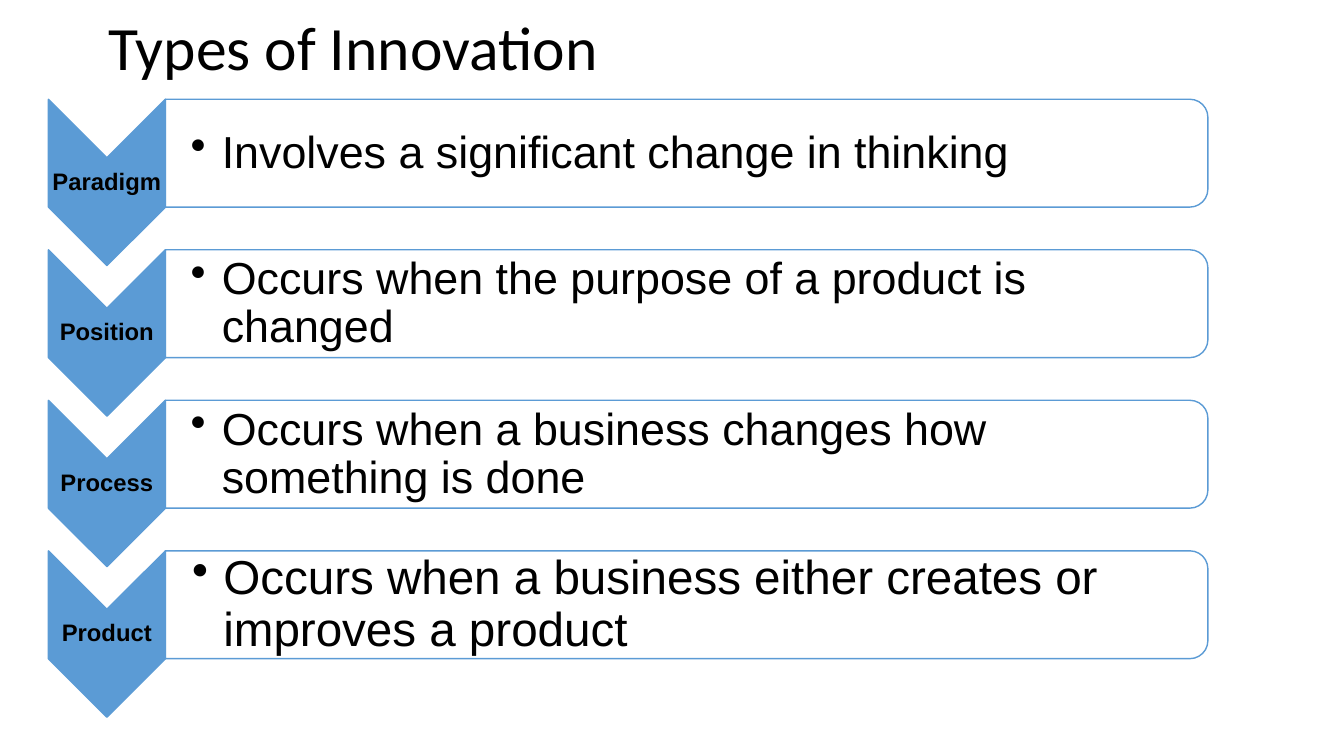
from lxml.etree import SubElement
from pptx import Presentation
from pptx.dml.color import RGBColor
from pptx.enum.shapes import MSO_SHAPE
from pptx.enum.text import MSO_ANCHOR, PP_ALIGN
from pptx.oxml.ns import qn
from pptx.util import Inches, Pt

COLORS = {"blue": "5B9BD5", "white": "FFFFFF", "black": "000000"}
ROWS = [
    ("Paradigm", "Involves a significant change in thinking", 32),
    ("Position", "Occurs when the purpose of a product is changed", 32),
    ("Process", "Occurs when a business changes how something is done", 32),
    ("Product", "Occurs when a business either creates or improves a product", 34),
]
TOP = 1.04
PITCH = 4.48 / 3


def color(name):
    return RGBColor.from_string(COLORS[name])


def add_turned(slide, kind, mid_x, mid_y, width, height, fill):
    """Add a shape turned by 90 degrees about its middle."""
    shape = slide.shapes.add_shape(
        kind, Inches(mid_x - width / 2), Inches(mid_y - height / 2),
        Inches(width), Inches(height))
    shape.rotation = 90
    shape.shadow.inherit = False
    shape.fill.solid()
    shape.fill.fore_color.rgb = color(fill)
    shape.line.color.rgb = color("blue")
    shape.line.width = Pt(1)
    return shape


def add_text(slide, text, box, size, font="Arial", insets=None):
    """Add a middle-anchored text box and return its paragraph."""
    frame = slide.shapes.add_textbox(*map(Inches, box)).text_frame
    frame.word_wrap = True
    frame.vertical_anchor = MSO_ANCHOR.MIDDLE
    if insets:
        left, rest = insets
        frame.margin_left = Inches(left)
        frame.margin_top = frame.margin_right = frame.margin_bottom = Inches(rest)
    para = frame.paragraphs[0]
    para.text = text
    para.line_spacing = 0.9
    para.font.name = font
    para.font.size = Pt(size)
    para.font.color.rgb = color("black")
    return para


def add_bullet(para):
    props = para._p.get_or_add_pPr()
    indent = Inches(0.31)
    props.set("marL", str(indent))
    props.set("indent", str(-indent))
    SubElement(props, qn("a:buChar"), char="•")


def add_panel(slide, mid_y):
    panel = add_turned(slide, MSO_SHAPE.ROUND_2_SAME_RECTANGLE,
                       6.81, mid_y, 1.07, 10.34, "white")
    tint = panel._element.spPr.find(qn("a:solidFill"))[0]
    SubElement(tint, qn("a:alpha"), val="90000")


def add_row(slide, top, label, text, size):
    add_turned(slide, MSO_SHAPE.CHEVRON, 1.06, top + 0.77, 1.65, 1.16, "blue")
    name = add_text(slide, label, (0.48, top + 0.52, 1.16, 0.5), 17,
                    insets=(0.01, 0.01))
    name.alignment = PP_ALIGN.CENTER
    name.font.bold = True
    add_panel(slide, top + 0.48)
    add_bullet(add_text(slide, text, (1.64, top, 10.28, 0.97), size,
                        insets=(size / 128, 0.02)))


def main():
    deck = Presentation()
    deck.slide_width = Inches(13.33)
    deck.slide_height = Inches(7.5)
    slide = deck.slides.add_slide(deck.slide_layouts[6])
    for i, row in enumerate(ROWS):
        add_row(slide, TOP + i * PITCH, *row)
    add_text(slide, "Types of Innovation", (0.98, -0.22, 11.5, 1.45), 44, "Calibri")
    deck.save("out.pptx")


if __name__ == "__main__":
    main()
